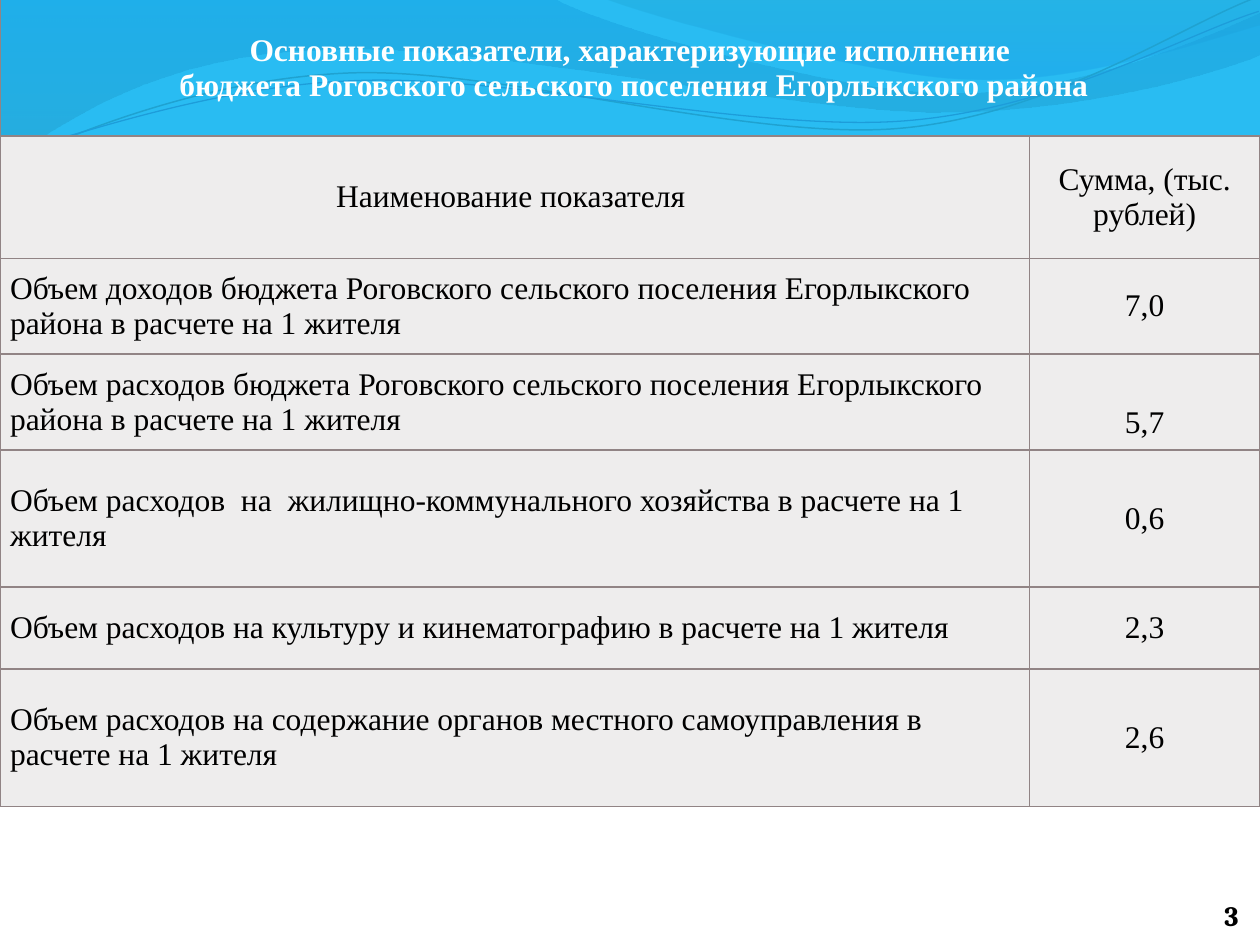
import dataclasses
import math

import pptx
import pptx.dml.color
import pptx.enum.text
import pptx.oxml
import pptx.oxml.ns
import pptx.util
from pptx.util import Inches

ALIGN = pptx.enum.text.PP_ALIGN
ANCHOR = pptx.enum.text.MSO_ANCHOR
NS = pptx.oxml.ns.nsdecls("a")
qn = pptx.oxml.ns.qn


@dataclasses.dataclass(frozen=True)
class Theme:
    black: str = "000000"
    white: str = "FFFFFF"
    border: str = "918485"
    cell: str = "EEEDED"
    title: str = "00B0F0"
    title_alpha: int = 84
    table_font: str = "Times New Roman"
    number_font: str = "Cambria"
    table_size: int = 18
    number_size: int = 16


THEME = Theme()

# A path is a start point, then line ends (2 numbers) or cubic curves (6 numbers).
# Gradient stops are (position, colour, opacity in percent).
WAVE_BANDS = [
    ([(0, 0), (4.4, -0.01), (4.76, 0.2, 6.64, 0.74, 7.58, 0.74),
      (8.53, 0.74, 9.58, 0.3, 10, 0.1), (10.01, 0.43),
      (9.83, 0.52, 8.7, 0.89, 7.46, 0.89), (6.22, 0.89, 3.82, 0.33, 2.57, 0.4),
      (1.29, 0.42, 0.46, 0.98, -0.01, 1.33), (0, 0)],
     [(0, "834591", 45), (1, "F35307", 55)]),
    ([(4.79, -0.01), (5.09, 0.11, 6.82, 0.6, 7.69, 0.63),
      (8.56, 0.67, 9.61, 0.31, 10, 0.2), (10, 0), (4.79, -0.01)],
     [(0, "B74915", 30), (0.8, "A14BB4", 45)]),
]
WAVE_TILT = 2.7
WAVE_LINES = [
    ([(0, 1.33), (0.48, 1.1, 1.57, 0.63, 2.76, 0.58),
      (3.95, 0.53, 5.93, 1.12, 7.13, 1.02), (8.33, 0.92, 9.38, 0.2, 9.97, -0.02)],
     (4.99, 0.69), "C45F30", 0.85),
    ([(0, 1.23), (0.47, 1.13, 1.63, 0.68, 2.83, 0.64),
      (4.02, 0.59, 5.98, 1.05, 7.17, 0.96), (8.37, 0.87, 9.41, 0.27, 9.99, 0.09)],
     (5, 0.72), "B83D68", 0.75),
]

COLUMN_WIDTHS = [8.17, 1.83]
ROW_HEIGHTS = [1.08, 0.97, 0.71, 0.71, 1.09, 0.65, 1.09]
TITLE = [
    "Основные показатели, характеризующие исполнение",
    " бюджета Роговского сельского поселения Егорлыкского района",
]
HEADINGS = ("Наименование показателя ", "Сумма, (тыс. рублей)")
INDICATORS = [
    ("Объем доходов бюджета Роговского сельского поселения Егорлыкского района "
     "в расчете на 1 жителя", "7,0"),
    ("Объем расходов бюджета Роговского сельского поселения Егорлыкского района "
     "в расчете на 1 жителя", "5,7"),
    ("Объем расходов  на  жилищно-коммунального хозяйства в расчете на 1 жителя", "0,6"),
    ("Объем расходов на культуру и кинематографию в расчете на 1 жителя", "2,3"),
    ("Объем расходов на содержание органов местного самоуправления "
     "в расчете на 1 жителя", "2,6"),
]
LOW_VALUE_ROW = 3


def rgb(value):
    return pptx.dml.color.RGBColor.from_string(value)


def set_values(target, values):
    for name, value in values.items():
        setattr(target, name, value)


def set_opacity(holder, percent):
    for colour in holder.iter(qn("a:srgbClr")):
        colour.append(pptx.oxml.parse_xml(f'<a:alpha {NS} val="{percent * 1000}"/>'))


def turn(segment, center, degrees):
    """Turn the points of a segment clockwise around a center."""
    cos, sin = math.cos(math.radians(degrees)), math.sin(math.radians(degrees))
    turned = []
    for x, y in zip(segment[::2], segment[1::2]):
        dx, dy = x - center[0], y - center[1]
        turned += [center[0] + dx * cos - dy * sin, center[1] + dx * sin + dy * cos]
    return tuple(turned)


def add_outline(page, path, closed):
    """Draw a freeform whose six-number segments become cubic curves."""
    points = [(Inches(x), Inches(y)) for segment in path
              for x, y in zip(segment[::2], segment[1::2])]
    builder = page.shapes.build_freeform(*points[0])
    builder.add_line_segments(points[1:], close=closed)
    shape = builder.convert_to_shape()
    shape.shadow.inherit = False
    lines = iter(list(shape._element.iter(qn("a:lnTo"))))
    for segment in path[1:]:
        line = next(lines)
        if len(segment) == 6:
            line.addprevious(curve := pptx.oxml.parse_xml(f"<a:cubicBezTo {NS}/>"))
            for knot in (line, next(lines), next(lines)):
                curve.append(knot[0])
                knot.getparent().remove(knot)
    return shape


def add_wave_band(page, path, stops):
    band = add_outline(page, path, closed=True)
    band.line.fill.background()
    band.fill.gradient()
    band.fill.gradient_angle = 270
    holders = band._element.iter(qn("a:gs"))
    for stop, holder, values in zip(band.fill.gradient_stops, holders, stops):
        position, colour, opacity = values
        stop.position = position
        stop.color.rgb = rgb(colour)
        set_opacity(holder, opacity)


def add_wave_line(page, path, center, colour, width):
    level = [turn(segment, center, WAVE_TILT) for segment in path]
    wave = add_outline(page, level, closed=False)
    wave.rotation = 360 - WAVE_TILT
    wave.fill.background()
    wave.line.color.rgb = rgb(colour)
    wave.line.width = pptx.util.Pt(width)


def write(frame, lines, align, font, size, colour, bold=False):
    for index, line in enumerate(lines):
        para = frame.paragraphs[0] if index == 0 else frame.add_paragraph()
        para.alignment = align
        span = para.add_run()
        span.text = line
        set_values(span.font, {"name": font, "size": pptx.util.Pt(size), "bold": bold})
        span.font.color.rgb = rgb(colour)


def set_borders(cell, sides):
    """Rule the given sides of a cell and leave the others clear."""
    for side in "LRTB":
        paint = "<a:noFill/>"
        if side in sides:
            paint = f'<a:solidFill><a:srgbClr val="{THEME.border}"/></a:solidFill>'
        cell._tc.get_or_add_tcPr().append(pptx.oxml.parse_xml(
            f'<a:ln{side} {NS} w="12700">{paint}</a:ln{side}>'))


def fill_cell(cell, lines, align, colour, fill, bold=False, sides="LRTB",
              anchor=ANCHOR.MIDDLE):
    margins = ("margin_left", "margin_right", "margin_top", "margin_bottom")
    set_values(cell, dict.fromkeys(margins, Inches(0.08)))
    cell.vertical_anchor = anchor
    set_borders(cell, sides)
    cell.fill.solid()
    cell.fill.fore_color.rgb = rgb(fill)
    write(cell.text_frame, lines, align, THEME.table_font, THEME.table_size, colour, bold)


def add_indicator_table(page):
    table = page.shapes.add_table(
        len(ROW_HEIGHTS), len(COLUMN_WIDTHS), 0, 0,
        Inches(sum(COLUMN_WIDTHS)), Inches(sum(ROW_HEIGHTS))).table
    set_values(table, {"first_row": False, "horz_banding": False})
    for column, width in zip(table.columns, COLUMN_WIDTHS):
        column.width = Inches(width)
    for row, height in zip(table.rows, ROW_HEIGHTS):
        row.height = Inches(height)

    title = table.cell(0, 0)
    title.merge(table.cell(0, 1))
    fill_cell(title, TITLE, ALIGN.CENTER, THEME.white, THEME.title, bold=True, sides="LB")
    set_opacity(title._tc.tcPr.find(qn("a:solidFill")), THEME.title_alpha)

    for row, texts in enumerate([HEADINGS, *INDICATORS], start=1):
        for column, text in enumerate(texts):
            is_name = row > 1 and column == 0
            is_low = row == LOW_VALUE_ROW and column == 1
            fill_cell(table.cell(row, column), [text],
                      ALIGN.LEFT if is_name else ALIGN.CENTER, THEME.black, THEME.cell,
                      anchor=ANCHOR.BOTTOM if is_low else ANCHOR.MIDDLE)


def add_page_number(page, number):
    box = page.shapes.add_textbox(Inches(9), Inches(7), Inches(0.83), Inches(0.4))
    set_values(box.text_frame, {
        "word_wrap": True, "vertical_anchor": ANCHOR.BOTTOM, "margin_left": 0,
        "margin_right": 0, "margin_top": 0, "margin_bottom": 0})
    write(box.text_frame, [number], ALIGN.RIGHT, THEME.number_font,
          THEME.number_size, THEME.black, bold=True)


def main():
    deck = pptx.Presentation()
    set_values(deck, {"slide_width": Inches(10), "slide_height": Inches(7.5)})
    page = deck.slides.add_slide(deck.slide_layouts[6])
    for band in WAVE_BANDS:
        add_wave_band(page, *band)
    for line in WAVE_LINES:
        add_wave_line(page, *line)
    add_page_number(page, "3")
    add_indicator_table(page)
    deck.save("out.pptx")


if __name__ == "__main__":
    main()
